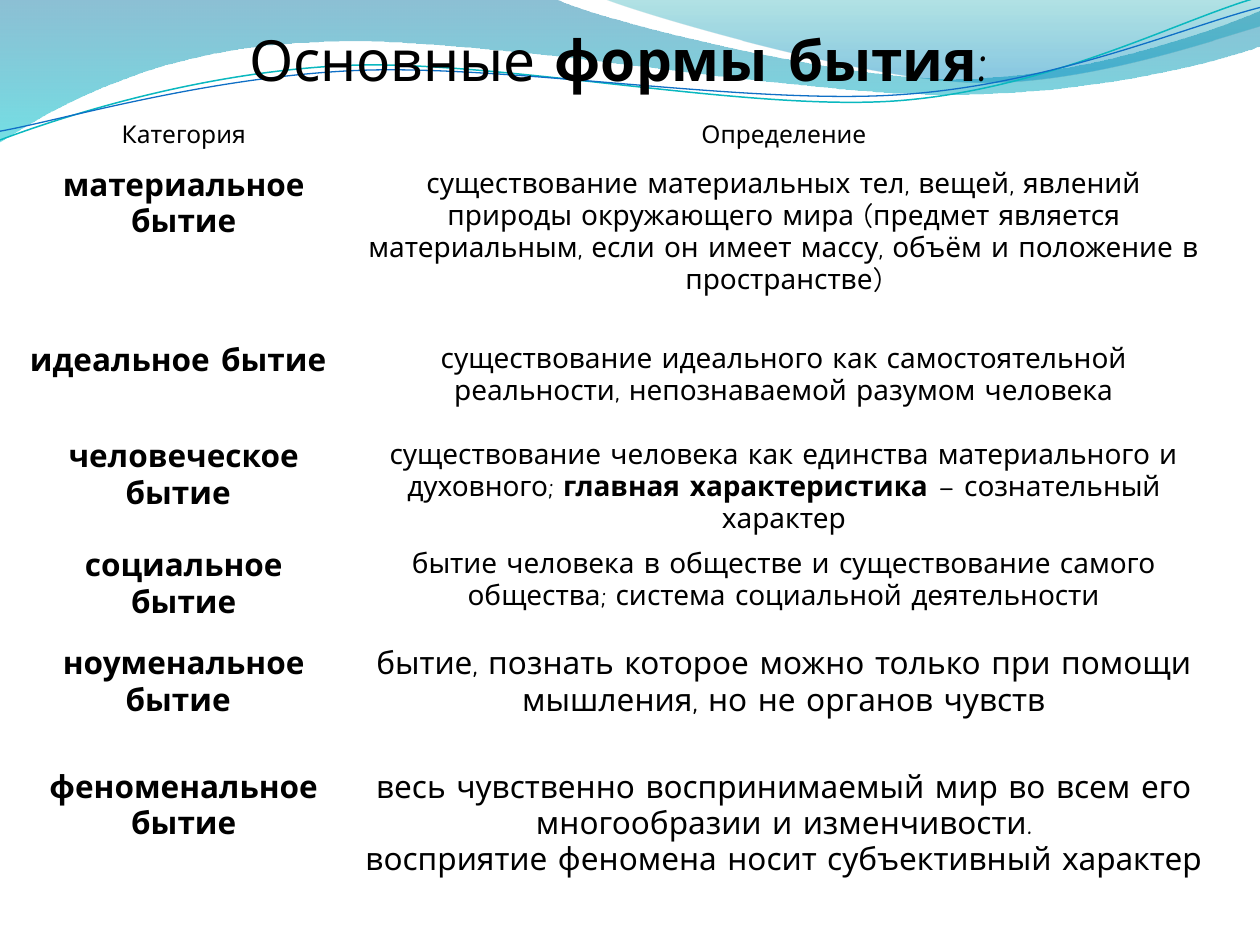
from dataclasses import dataclass

from lxml import etree
from pptx import Presentation
from pptx.dml.color import RGBColor
from pptx.enum import text
from pptx.oxml.ns import qn
from pptx.util import Pt


@dataclass(frozen=True)
class Theme:
    font: str = "Comic Neue"
    ink: RGBColor = RGBColor(0, 0, 0)
    title: float = 32.4
    title_end: float = 39.6
    header: float = 14
    body: float = 16
    large: float = 18
    blue_wave: tuple = ((0, "0074A1", 45), (1, "00C6CF", 55))
    teal_wave: tuple = ((0, "00A1A9", 30), (0.8, "008BBF", 45))
    teal_line: str = "0AB8BF"
    blue_line: str = "0F6FC6"


theme = Theme()
NO_GRID_STYLE = "{2D5ABB26-0587-4C30-8999-92F81FD0307C}"

# Each outline is a list of points (x, y) and curves (x1, y1, x2, y2, x3, y3).
waves = [
    (theme.blue_wave, [
        (-0.7, -0.7), (317, -0.7), (343, 12, 478, 45, 546, 45), (614, 45, 690, 19, 720, 6),
        (720.7, 26), (708, 32, 626, 55, 537, 54), (448, 54, 275, 20, 185, 24),
        (93, 26, 33, 60, -0.7, 81.4)]),
    (theme.teal_wave, [
        (345, -0.7), (366, 8, 491, 45, 554, 47), (616, 49.7, 692, 23, 720, 15),
        (720, -0.7)]),
]
wave_lines = [
    (theme.teal_line, 0.85, [
        (0, 80), (34.6, 67, 114, 41, 199, 37.4), (284, 34, 427, 64, 513, 57.6),
        (600, 51, 675, 10.8, 718.6, -1.4)]),
    (theme.blue_line, 0.75, [
        (0, 75), (34, 69, 118, 44, 204, 40.3), (290, 36.7, 430, 60.5, 516, 54),
        (602, 48, 678, 15, 720, 4.3)]),
]


def draw_outline(page, outline, close):
    """Add a freeform through all points, then turn each curve's three lines into a Bezier."""
    points = [(Pt(x), Pt(y)) for piece in outline for x, y in zip(piece[::2], piece[1::2])]
    builder = page.shapes.build_freeform(*points[0], scale=1.0)
    builder.add_line_segments(points[1:], close=close)
    shape = builder.convert_to_shape()
    shape.shadow.inherit = False
    lines = iter(list(shape.element.iter(qn("a:lnTo"))))
    for piece in outline[1:]:
        line = next(lines)
        if len(piece) == 6:
            curve = etree.Element(qn("a:cubicBezTo"))
            line.addprevious(curve)
            for part in (line, next(lines), next(lines)):
                curve.append(part[0])
                part.getparent().remove(part)
    return shape


def write_runs(para, runs, size):
    """Fill a centred paragraph from (text, bold) pairs; a newline breaks the line."""
    para.alignment = text.PP_ALIGN.CENTER
    para.font.name = theme.font
    para.font.size = Pt(size)
    para.font.color.rgb = theme.ink
    for words, bold in runs:
        for number, line in enumerate(words.split("\n")):
            if number:
                para.add_line_break()
            run = para.add_run()
            run.text = line
            run.font.bold = bold


deck = Presentation()
deck.slide_width, deck.slide_height = Pt(720), Pt(540)
page = deck.slides.add_slide(deck.slide_layouts[5])

# Waves across the top
for stops, outline in waves:
    wave = draw_outline(page, outline, close=True)
    wave.fill.gradient()
    wave.fill.gradient_angle = 270
    for stop, (position, colour, _) in zip(wave.fill.gradient_stops, stops):
        stop.position = position
        stop.color.rgb = RGBColor.from_string(colour)
    for colour_element, (_, _, opacity) in zip(wave.element.iter(qn("a:srgbClr")), stops):
        etree.SubElement(colour_element, qn("a:alpha"), val=str(opacity * 1000))
    wave.line.fill.background()

for colour, width, outline in wave_lines:
    wave = draw_outline(page, outline, close=False)
    wave.fill.background()
    wave.line.color.rgb = RGBColor.from_string(colour)
    wave.line.width = Pt(width)

# Title, in front of the waves
title = page.shapes.title
page.shapes.element.append(title.element)
title.left, title.top, title.width, title.height = Pt(36), Pt(9.36), Pt(648), Pt(45)
frame = title.text_frame
frame.auto_size = text.MSO_AUTO_SIZE.NONE
frame.word_wrap = True
frame.vertical_anchor = text.MSO_ANCHOR.BOTTOM
frame.margin_left = frame.margin_right = frame.margin_bottom = 0
heading = frame.paragraphs[0]
write_runs(heading, [("Основные ", False), ("формы бытия", True), (":", False), (" ", False)],
           theme.title)
heading.runs[-1].font.size = Pt(theme.title_end)

# Table: row height, category, definition runs, definition size
rows = [
    (100, "материальное бытие",
     [("существование материальных тел, вещей, явлений природы окружающего мира "
       "(предмет является материальным, если он имеет массу, объём и положение "
       "в пространстве)", False)], theme.body),
    (55, "идеальное бытие ",
     [("существование идеального как самостоятельной реальности, "
       "непознаваемой разумом человека", False)], theme.body),
    (58.5, "человеческое бытие ",
     [("существование человека как единства материального и духовного; ", False),
      ("главная характеристика ", True), ("– сознательный характер", False)], theme.body),
    (56, "социальное бытие",
     [("бытие человека в обществе и существование самого общества; "
       "система социальной деятельности", False)], theme.body),
    (70.5, "ноуменальное бытие ",
     [("бытие, познать которое можно только при помощи мышления, "
       "но не органов чувств", False)], theme.large),
    (70.5, "феноменальное бытие",
     [("весь чувственно воспринимаемый мир во всем его многообразии и изменчивости.\n"
       "восприятие феномена носит субъективный характер ", False)], theme.large),
]
holder = page.shapes.add_table(len(rows) + 1, 2, Pt(8.5), Pt(65.5), Pt(686), Pt(437.5))
for style in holder.element.iter(qn("a:tableStyleId")):
    style.text = NO_GRID_STYLE
table = holder.table
table.first_row = table.horz_banding = False
table.columns[0].width, table.columns[1].width = Pt(193), Pt(493)

table.rows[0].height = Pt(27)
for cell, label in zip(table.rows[0].cells, ("Категория", "Определение")):
    write_runs(cell.text_frame.paragraphs[0], [(label, False)], theme.header)

for number, (height, category, definition, size) in enumerate(rows, start=1):
    table.rows[number].height = Pt(height)
    write_runs(table.cell(number, 0).text_frame.paragraphs[0], [(category, True)], theme.large)
    write_runs(table.cell(number, 1).text_frame.paragraphs[0], definition, size)

for cell in table.iter_cells():
    cell.fill.background()

deck.save("out.pptx")
